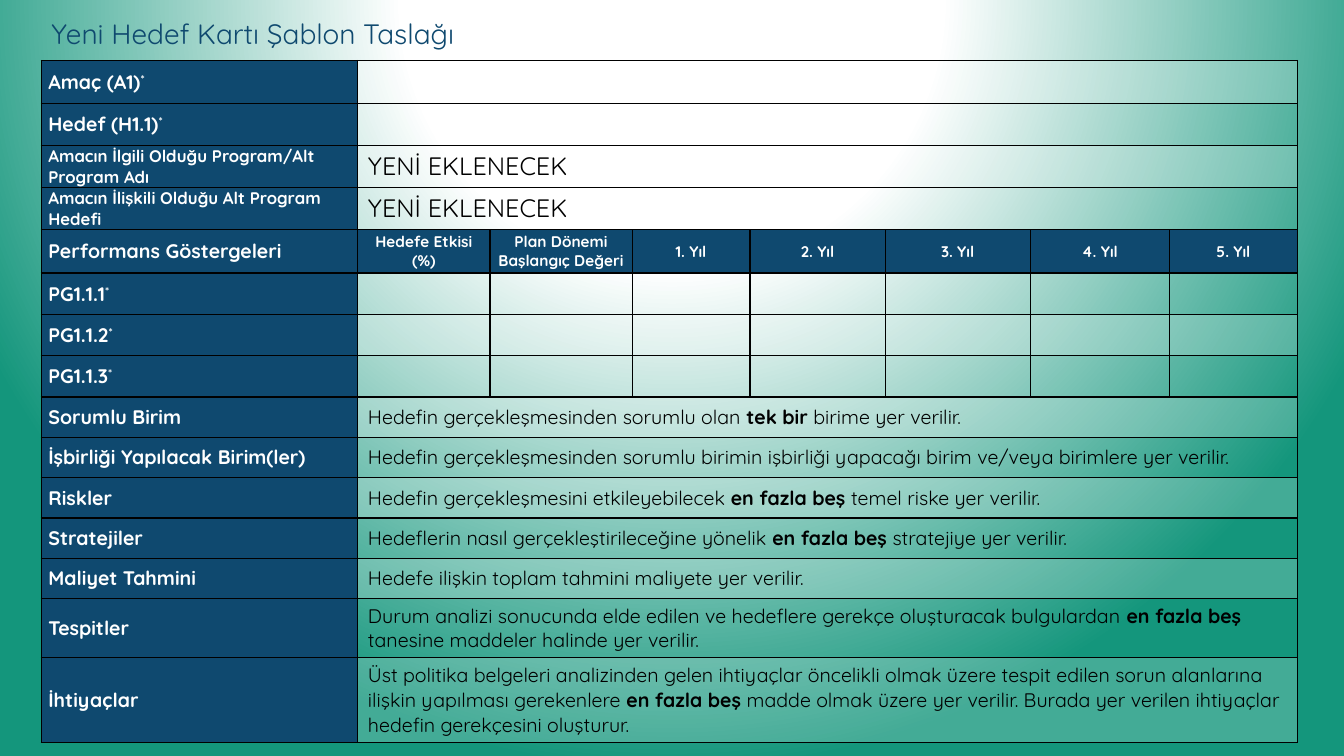
import pptx
import pptx.util
import pptx.oxml
import pptx.dml.color
import pptx.enum.text

Inches, Pt = pptx.util.Inches, pptx.util.Pt
ANCHOR, ALIGN = pptx.enum.text.MSO_ANCHOR, pptx.enum.text.PP_ALIGN
NS = ('xmlns:a="http://schemas.openxmlformats.org/drawingml/2006/main" '
      'xmlns:p="http://schemas.openxmlformats.org/presentationml/2006/main"')

FONT = "Quicksand"
COLORS = {"navy": "0F496F", "green": "14967C", "white": "FFFFFF", "black": "000000"}

# Table grid, in inches
LEFT, TOP = 0.41, 0.6
COLS = [3.14, 1.31, 1.41, 1.17, 1.34, 1.44, 1.38, 1.27]
ROWS = [0.43, 0.41] + [0.42] * 2 + [0.43] + [0.41] * 3 + [0.4] * 5 + [0.58, 0.84]

# Text formats
TITLE = {"size": Pt(20), "bold": False, "color": "navy"}
LABEL = {"size": Pt(14), "bold": True, "color": "white"}
SMALL_LABEL = {**LABEL, "size": Pt(12)}
HEAD = {**LABEL, "size": Pt(11)}
BODY = {"size": Pt(14), "bold": False, "color": "black"}
NEW = {**BODY, "size": Pt(18)}

# Label, label format, wide text, text format; "|" sets off a bold part
GOAL_ROWS = [
    ("Amaç (A1)*", LABEL, "", BODY),
    ("Hedef (H1.1)*", LABEL, "", BODY),
    ("Amacın İlgili Olduğu Program/Alt Program Adı", SMALL_LABEL, "YENİ EKLENECEK", NEW),
    ("Amacın İlişkili Olduğu Alt Program Hedefi", SMALL_LABEL, "YENİ EKLENECEK", NEW),
]
HEADINGS = ["Hedefe Etkisi\n(%)", "Plan Dönemi Başlangıç Değeri"]
HEADINGS += [f"{year}. Yıl" for year in range(1, 6)]
INDICATORS = [f"PG1.1.{n}*" for n in range(1, 4)]
DETAILS = [
    ("Sorumlu Birim",
     "Hedefin gerçekleşmesinden sorumlu olan |tek bir |birime yer verilir."),
    ("İşbirliği Yapılacak Birim(ler)",
     "Hedefin gerçekleşmesinden sorumlu birimin işbirliği yapacağı birim "
     "ve/veya birimlere yer verilir."),
    ("Riskler",
     "Hedefin gerçekleşmesini etkileyebilecek |en fazla beş |temel riske yer verilir."),
    ("Stratejiler",
     "Hedeflerin nasıl gerçekleştirileceğine yönelik |en fazla beş |stratejiye yer verilir."),
    ("Maliyet Tahmini", "Hedefe ilişkin toplam tahmini maliyete yer verilir."),
    ("Tespitler",
     "Durum analizi sonucunda elde edilen ve hedeflere gerekçe oluşturacak bulgulardan "
     "|en fazla beş |tanesine maddeler halinde yer verilir."),
    ("İhtiyaçlar",
     "Üst politika belgeleri analizinden gelen ihtiyaçlar öncelikli olmak üzere tespit "
     "edilen sorun alanlarına ilişkin yapılması gerekenlere |en fazla beş |madde olmak "
     "üzere yer verilir. Burada yer verilen ihtiyaçlar hedefin gerekçesini oluşturur."),
]


def rgb(name):
    return pptx.dml.color.RGBColor.from_string(COLORS[name])


def add_run(p, text, fmt):
    r = p.add_run()
    r.text = text
    r.font.name = FONT
    for key, value in fmt.items():
        if key == "color":
            r.font.color.rgb = rgb(value)
        else:
            setattr(r.font, key, value)
    return r


def write(tf, text, fmt, align=ALIGN.LEFT):
    """Write lines of text; "|" toggles bold, a final "*" is raised."""
    for i, line in enumerate(text.split("\n")):
        p = tf.add_paragraph() if i else tf.paragraphs[0]
        p.alignment = align
        for j, part in enumerate(line.rstrip("*").split("|")):
            if part:
                add_run(p, part, {**fmt, "bold": fmt["bold"] or j % 2 == 1})
        if line.endswith("*"):
            star = add_run(p, "*", fmt)
            star.font._element.set("baseline", "30000")


def set_background(s):
    stops = "".join(
        f'<a:gs pos="{pos * 1000}"><a:srgbClr val="{COLORS[name]}"/></a:gs>'
        for pos, name in ((0, "white"), (35, "white"), (100, "green")))
    s._element.cSld.insert(0, pptx.oxml.parse_xml(
        f'<p:bg {NS}><p:bgPr><a:gradFill rotWithShape="1"><a:gsLst>{stops}</a:gsLst>'
        '<a:path path="circle"><a:fillToRect l="50000" t="-80000" r="50000" b="180000"/>'
        '</a:path></a:gradFill><a:effectLst/></p:bgPr></p:bg>'))


def add_title(s, text):
    sp = s.shapes.title
    sp.left, sp.top, sp.width, sp.height = map(Inches, (LEFT, 0.07, 9.33, 0.53))
    tf = sp.text_frame
    tf.auto_size = pptx.enum.text.MSO_AUTO_SIZE.NONE
    tf.vertical_anchor = ANCHOR.MIDDLE
    write(tf, text, TITLE)


def style_cell(cell, fill, alpha=None):
    """Fill the cell (None for clear) and draw its four borders."""
    cell.vertical_anchor = ANCHOR.MIDDLE
    if fill:
        cell.fill.solid()
        cell.fill.fore_color.rgb = rgb(fill)
    else:
        cell.fill.background()
    tcPr = cell._tc.get_or_add_tcPr()
    if alpha:
        color = tcPr.find(".//" + pptx.oxml.ns.qn("a:srgbClr"))
        color.append(pptx.oxml.parse_xml(f'<a:alpha {NS} val="{alpha * 1000}"/>'))
    for i, side in enumerate("LRTB"):
        tcPr.insert(i, pptx.oxml.parse_xml(
            f'<a:ln{side} {NS} w="12700"><a:solidFill><a:srgbClr val="{COLORS["black"]}"/>'
            f'</a:solidFill></a:ln{side}>'))


def set_margins(cell, left):
    cell.margin_left = Inches(left)
    cell.margin_right = cell.margin_top = cell.margin_bottom = 0


def add_grid(s):
    frame = s.shapes.add_table(len(ROWS), len(COLS), Inches(LEFT), Inches(TOP),
                               Inches(sum(COLS)), Inches(sum(ROWS)))
    table = frame.table
    table.first_row = table.horz_banding = False
    for col, width in zip(table.columns, COLS):
        col.width = Inches(width)
    for row, height in zip(table.rows, ROWS):
        row.height = Inches(height)
    heading_row = len(GOAL_ROWS)
    for r in range(len(ROWS)):
        for c in range(len(COLS)):
            cell = table.cell(r, c)
            if c == 0 or r == heading_row:
                style_cell(cell, "navy")
            elif r % 2 == 0:
                style_cell(cell, "white", alpha=20)
            else:
                style_cell(cell, None)
    return table


def add_label(table, row, text, fmt=LABEL):
    cell = table.cell(row, 0)
    set_margins(cell, 0.07)
    write(cell.text_frame, text, fmt)


def add_wide_row(table, row, label, label_fmt, text, fmt):
    add_label(table, row, label, label_fmt)
    cell = table.cell(row, 1)
    cell.merge(table.cell(row, len(COLS) - 1))
    write(cell.text_frame, text, fmt)


def main():
    prs = pptx.Presentation()
    prs.slide_width, prs.slide_height = Inches(13.33), Inches(7.5)
    s = prs.slides.add_slide(prs.slide_layouts[5])
    set_background(s)
    add_title(s, "Yeni Hedef Kartı Şablon Taslağı")
    table = add_grid(s)

    # Goal and programme rows
    for row, goal in enumerate(GOAL_ROWS):
        add_wide_row(table, row, *goal)

    # Performance indicators
    row = len(GOAL_ROWS)
    add_label(table, row, "Performans Göstergeleri")
    for c, heading in enumerate(HEADINGS, 1):
        set_margins(table.cell(row, c), 0)
        write(table.cell(row, c).text_frame, heading, HEAD, ALIGN.CENTER)
    for row, indicator in enumerate(INDICATORS, row + 1):
        add_label(table, row, indicator)

    # Explanations
    for row, (label, text) in enumerate(DETAILS, row + 1):
        add_wide_row(table, row, label, LABEL, text, BODY)

    prs.save("out.pptx")


if __name__ == "__main__":
    main()
